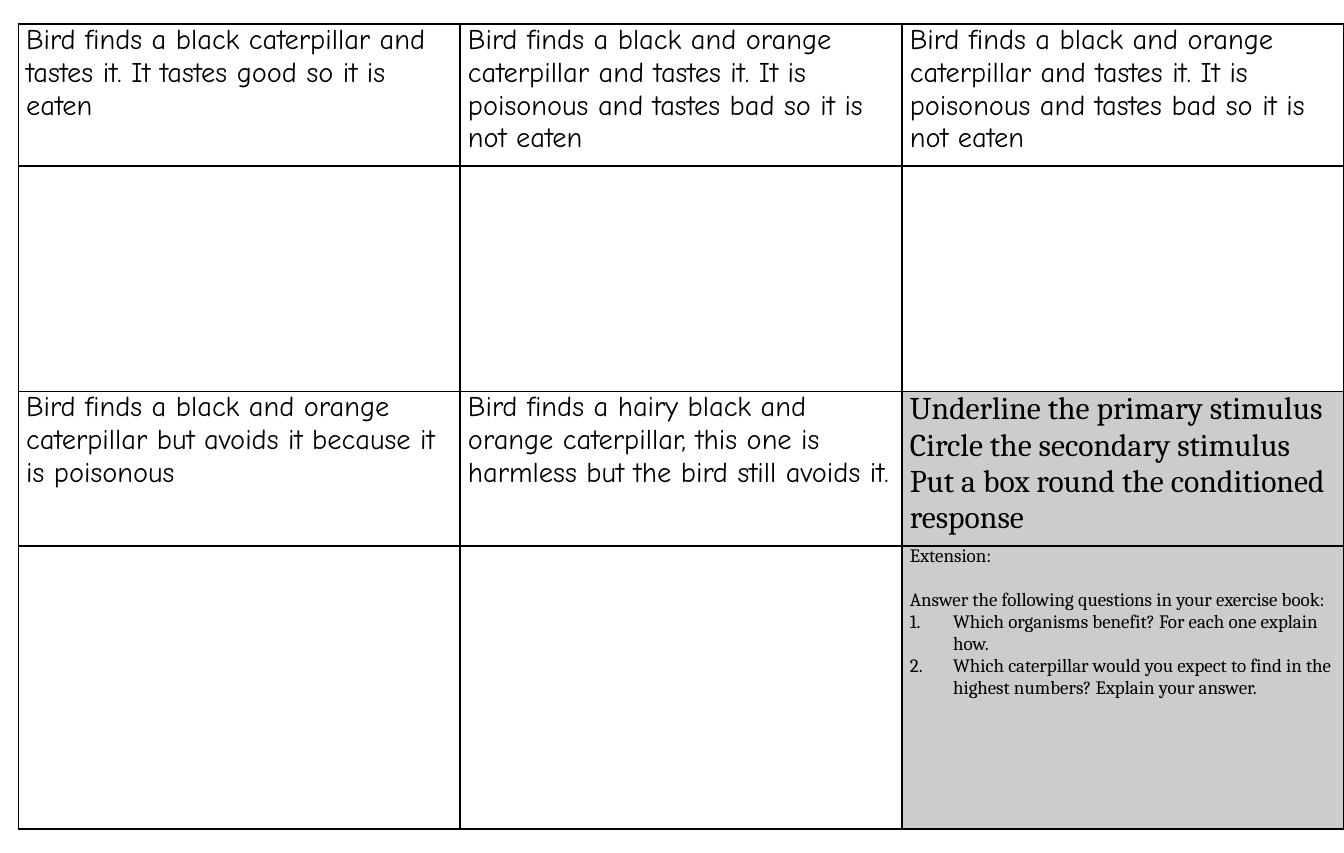
from lxml.etree import SubElement
from pptx import Presentation
from pptx.dml.color import RGBColor
from pptx.oxml import parse_xml
from pptx.oxml.ns import nsdecls, qn
from pptx.util import Inches, Pt

BLACK = RGBColor(0x00, 0x00, 0x00)
WHITE = RGBColor(0xFF, 0xFF, 0xFF)
GREY = RGBColor(0xCC, 0xCC, 0xCC)
STORY_FONT = "Comic Neue"
TASK_FONT = "Cambria"

COLUMN_COUNT = 3
GRID_WIDTH = 11.65
ROW_HEIGHTS = [1.25, 1.98, 1.36, 2.49]

# Cell wording, keyed by row and column
POISONOUS = ("Bird finds a black and orange caterpillar and tastes it. "
             "It is poisonous and tastes bad so it is not eaten")
STORY = {
    (0, 0): "Bird finds a black caterpillar and tastes it. It tastes good so it is eaten",
    (0, 1): POISONOUS,
    (0, 2): POISONOUS,
    (2, 0): "Bird finds a black and orange caterpillar but avoids it because it is poisonous",
    (2, 1): "Bird finds a hairy black and orange caterpillar, this one is harmless "
            "but the bird still avoids it.",
}
INSTRUCTIONS = [
    "Underline the primary stimulus",
    "Circle the secondary stimulus",
    "Put a box round the conditioned response",
]
EXTENSION = [
    "Extension:",
    "Answer the following questions in your exercise book:",
    "Which organisms benefit? For each one explain how.",
    "Which caterpillar would you expect to find in the highest numbers? Explain your answer.",
]


def write_cell(cell, lines, font, size):
    cell.text_frame.text = "\n".join(lines)
    for paragraph in cell.text_frame.paragraphs:
        for run in paragraph.runs:
            run.font.name = font
            run.font.size = Pt(size)
            run.font.color.rgb = BLACK


def add_borders(cell):
    properties = cell._tc.get_or_add_tcPr()
    for position, side in enumerate(("lnL", "lnR", "lnT", "lnB")):
        border = parse_xml(
            f'<a:{side} {nsdecls("a")} w="{Pt(1)}"><a:solidFill>'
            f'<a:srgbClr val="{BLACK}"/></a:solidFill></a:{side}>')
        properties.insert(position, border)


prs = Presentation()
prs.slide_width = Inches(11.811)
prs.slide_height = Inches(7.5)
slide = prs.slides.add_slide(prs.slide_layouts[6])

# Storyboard grid: equal columns
storyboard = slide.shapes.add_table(
    len(ROW_HEIGHTS), COLUMN_COUNT, Inches(0.16), Inches(0.21),
    Inches(GRID_WIDTH), Inches(sum(ROW_HEIGHTS))).table
storyboard.first_row = False
storyboard.horz_banding = False
for column in storyboard.columns:
    column.width = Inches(GRID_WIDTH / COLUMN_COUNT)
for row, height in zip(storyboard.rows, ROW_HEIGHTS):
    row.height = Inches(height)

task_cells = [(2, 2), (3, 2)]
for r in range(len(ROW_HEIGHTS)):
    for c in range(COLUMN_COUNT):
        cell = storyboard.cell(r, c)
        cell.margin_left = cell.margin_right = Inches(0.07)
        cell.margin_top = cell.margin_bottom = 0
        cell.fill.solid()
        cell.fill.fore_color.rgb = GREY if (r, c) in task_cells else WHITE
        add_borders(cell)
        if (r, c) in STORY:
            write_cell(cell, [STORY[r, c]], STORY_FONT, 18)

# Instructions and extension task
write_cell(storyboard.cell(2, 2), INSTRUCTIONS, TASK_FONT, 20)
extension_cell = storyboard.cell(3, 2)
write_cell(extension_cell, EXTENSION, TASK_FONT, 12)
heading, _, *questions = extension_cell.text_frame.paragraphs
heading.space_after = Pt(14)

# Numbering of the questions
for question in questions:
    numbering = question._p.get_or_add_pPr()
    numbering.set("marL", str(Inches(0.38)))
    numbering.set("indent", str(-Inches(0.38)))
    SubElement(numbering, qn("a:buFont"), typeface="+mj-lt")
    SubElement(numbering, qn("a:buAutoNum"), type="arabicPeriod")

prs.save("out.pptx")
